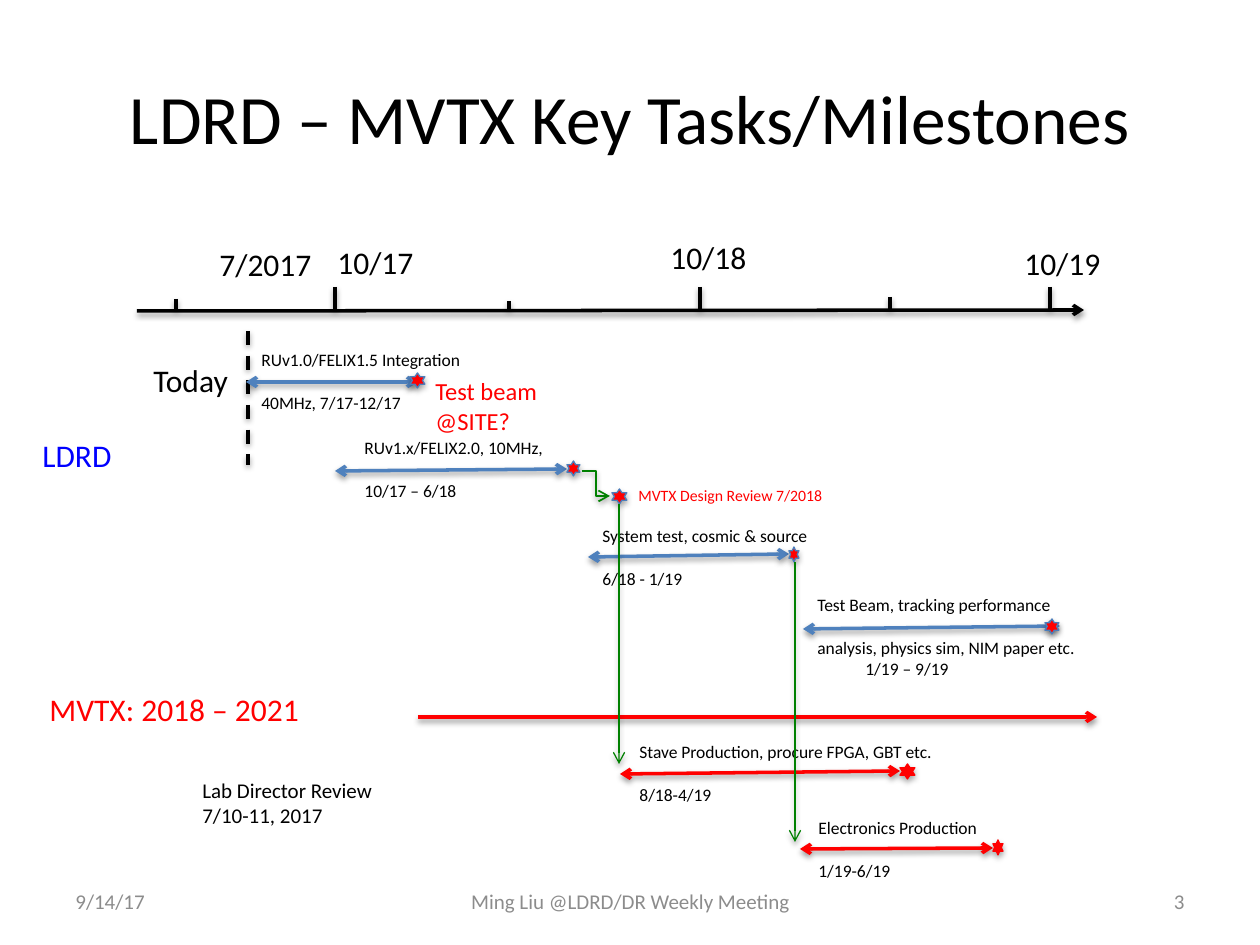
from dataclasses import dataclass
from typing import NamedTuple

from lxml.etree import SubElement
from pptx import Presentation
from pptx.dml.color import RGBColor
from pptx.enum.dml import MSO_LINE
from pptx.enum.shapes import MSO_CONNECTOR, MSO_SHAPE
from pptx.enum.text import MSO_ANCHOR, PP_ALIGN
from pptx.oxml.ns import qn
from pptx.util import Emu, Pt

PX = 914400 / 126
COLORS = {
    "black": "000000", "blue": "4F81BD", "edge": "4B7EBC", "red": "FF0000",
    "label": "0000FF", "green": "008000", "gray": "8C8C8C", "white": "FFFFFF",
}


class Box(NamedTuple):
    left: int
    top: int
    width: int
    height: int


class Span(NamedTuple):
    x1: int
    y1: int
    x2: int
    y2: int


@dataclass
class Label:
    lines: list[str]
    box: Box
    size: float = 18
    color: str = "black"
    align: PP_ALIGN = PP_ALIGN.LEFT
    anchor: MSO_ANCHOR = MSO_ANCHOR.TOP
    wrap: bool = False
    gap: float = 0
    last_indent: int = 0


@dataclass
class Line:
    span: Span
    color: str = "black"
    width: float = 2
    ends: tuple[str, ...] = ()
    dashed: bool = False
    kind: MSO_CONNECTOR = MSO_CONNECTOR.STRAIGHT


@dataclass
class Task:
    lines: list[str]
    text_box: Box
    span: Span
    star: Box
    color: str = "blue"
    edge: str = "edge"
    last_indent: int = 0


TAIL = ("tailEnd",)
BOTH = ("headEnd", "tailEnd")

HEADINGS = [
    Label(["LDRD – MVTX Key Tasks/Milestones"], Box(63, 38, 1134, 157), 39.6,
          align=PP_ALIGN.CENTER, anchor=MSO_ANCHOR.MIDDLE, wrap=True),
    Label(["LDRD"], Box(30, 430, 96, 50), color="label"),
    Label(["MVTX: 2018 – 2021"], Box(37, 684, 277, 50), color="red"),
    Label(["7/2017"], Box(207, 239, 118, 50)),
    Label(["10/17"], Box(325, 237, 102, 50)),
    Label(["10/18"], Box(658, 232, 102, 50)),
    Label(["10/19"], Box(1012, 238, 102, 50)),
    Label(["Today"], Box(141, 355, 105, 50)),
    Label(["MVTX Design Review 7/2018"], Box(626, 480, 212, 32), 9, "red"),
    Label(["Lab Director Review", "7/10-11, 2017"], Box(190, 771, 202, 63), 12),
    Label(["Test beam", "@SITE?"], Box(423, 370, 130, 72), 14, "red"),
]
FOOTERS = [
    Label([text], Box(left, 876, width, 50), 12, "gray", align, MSO_ANCHOR.MIDDLE, True)
    for text, left, width, align in [
        ("9/14/17", 63, 294, PP_ALIGN.LEFT),
        ("Ming Liu @LDRD/DR Weekly Meeting", 431, 399, PP_ALIGN.CENTER),
        ("3", 903, 294, PP_ALIGN.RIGHT),
    ]
]
TICKS = [
    Line(Span(x, top, x, 309))
    for x, top in [(176, 299), (335, 287), (509, 301), (700, 287), (890, 297), (1050, 287)]
]
AXES = [
    Line(Span(137, 311, 1084, 310), ends=TAIL),
    Line(Span(418, 717, 1097, 717), "red", ends=TAIL),
    Line(Span(248, 331, 248, 465), dashed=True),
]
DEPENDENCIES = [
    Line(Span(619, 504, 619, 764), "green", 0.75, TAIL),
    Line(Span(795, 562, 795, 842), "green", 0.75, TAIL),
    Line(Span(582, 471, 610, 496), "green", 1, TAIL, kind=MSO_CONNECTOR.ELBOW),
]
TASKS = [
    Task(["RUv1.0/FELIX1.5 Integration", "40MHz, 7/17-12/17"],
         Box(249, 343, 278, 77), Span(246, 382, 418, 382), Box(410, 373, 15, 15)),
    Task(["RUv1.x/FELIX2.0, 10MHz,", "10/17 – 6/18"],
         Box(352, 431, 272, 77), Span(335, 471, 567, 469), Box(567, 461, 13, 15)),
    Task(["System test, cosmic & source", "6/18 - 1/19"],
         Box(590, 519, 234, 77), Span(588, 557, 789, 554), Box(789, 547, 10, 15)),
    Task(["Test Beam, tracking performance", "analysis, physics sim, NIM paper etc.",
          "1/19 – 9/19"],
         Box(805, 588, 302, 97), Span(803, 629, 1060, 626), Box(1045, 619, 14, 15),
         last_indent=48),
    Task(["Stave Production, procure FPGA, GBT etc.", "8/18-4/19"],
         Box(627, 735, 324, 77), Span(620, 774, 900, 771), Box(900, 764, 15, 15),
         "red", "red"),
    Task(["Electronics Production", "1/19-6/19"],
         Box(806, 811, 218, 77), Span(800, 849, 993, 848), Box(993, 840, 10, 15),
         "red", "red"),
]
REVIEW_STAR = Box(612, 489, 15, 15)


def emu(pixels: int) -> Emu:
    """Turn pixels into EMU."""
    return Emu(round(pixels * PX))


def rgb(name: str) -> RGBColor:
    """Look up a named colour."""
    return RGBColor.from_string(COLORS[name])


def apply(target, values: dict) -> None:
    """Set every attribute in a dict of format values."""
    for name, value in values.items():
        setattr(target, name, value)


def add_shadow(properties, distance: int, alpha: int) -> None:
    """Give shape properties a soft downward shadow."""
    effects = SubElement(properties, qn("a:effectLst"))
    shadow = SubElement(effects, qn("a:outerShdw"), blurRad="40000", dist=str(distance),
                        dir="5400000", rotWithShape="0")
    color = SubElement(shadow, qn("a:srgbClr"), val=COLORS["black"])
    SubElement(color, qn("a:alpha"), val=str(alpha * 1000))


def add_label(slide, label: Label) -> None:
    """Draw a text box with one paragraph per line."""
    frame = slide.shapes.add_textbox(*map(emu, label.box)).text_frame
    apply(frame, {"word_wrap": label.wrap, "vertical_anchor": label.anchor,
                  "text": "\n".join(label.lines)})
    for paragraph in frame.paragraphs:
        paragraph.alignment = label.align
        apply(paragraph.font, {"size": Pt(label.size), "name": "Calibri"})
        paragraph.font.color.rgb = rgb(label.color)
    if label.gap:
        frame.paragraphs[0].space_after = Pt(label.gap)
    if label.last_indent:
        frame.paragraphs[-1]._p.get_or_add_pPr().set("marL", str(emu(label.last_indent)))


def add_line(slide, line: Line) -> None:
    """Draw a connector with optional arrowheads."""
    connector = slide.shapes.add_connector(line.kind, *map(emu, line.span))
    connector.line.color.rgb = rgb(line.color)
    connector.line.width = Pt(line.width)
    if line.dashed:
        connector.line.dash_style = MSO_LINE.DASH
    for end in line.ends:
        SubElement(connector.line._get_or_add_ln(), qn(f"a:{end}"), type="arrow")
    add_shadow(connector._element.spPr, 20000, 38)


def add_star(slide, box: Box, edge: str) -> None:
    """Draw a red milestone star."""
    star = slide.shapes.add_shape(MSO_SHAPE.STAR_6_POINT, *map(emu, box))
    star.fill.solid()
    star.fill.fore_color.rgb = rgb("red")
    star.line.color.rgb = rgb(edge)
    star.line.width = Pt(0.75)
    add_shadow(star._element.spPr, 23000, 35)


def add_task(slide, task: Task) -> None:
    """Draw a task's duration arrow, milestone and wording."""
    add_line(slide, Line(task.span, task.color, ends=BOTH))
    add_star(slide, task.star, task.edge)
    add_label(slide, Label(task.lines, task.text_box, 10, wrap=True, gap=12.2,
                           last_indent=task.last_indent))


def main() -> None:
    """Build and save the milestone slide."""
    presentation = Presentation()
    apply(presentation, {"slide_width": emu(1260), "slide_height": emu(945)})
    slide = presentation.slides.add_slide(presentation.slide_layouts[6])
    slide.background.fill.solid()
    slide.background.fill.fore_color.rgb = rgb("white")
    for line in AXES + TICKS:
        add_line(slide, line)
    for task in TASKS:
        add_task(slide, task)
    add_star(slide, REVIEW_STAR, "edge")
    for line in DEPENDENCIES:
        add_line(slide, line)
    for label in HEADINGS + FOOTERS:
        add_label(slide, label)
    presentation.save("out.pptx")


if __name__ == "__main__":
    main()
